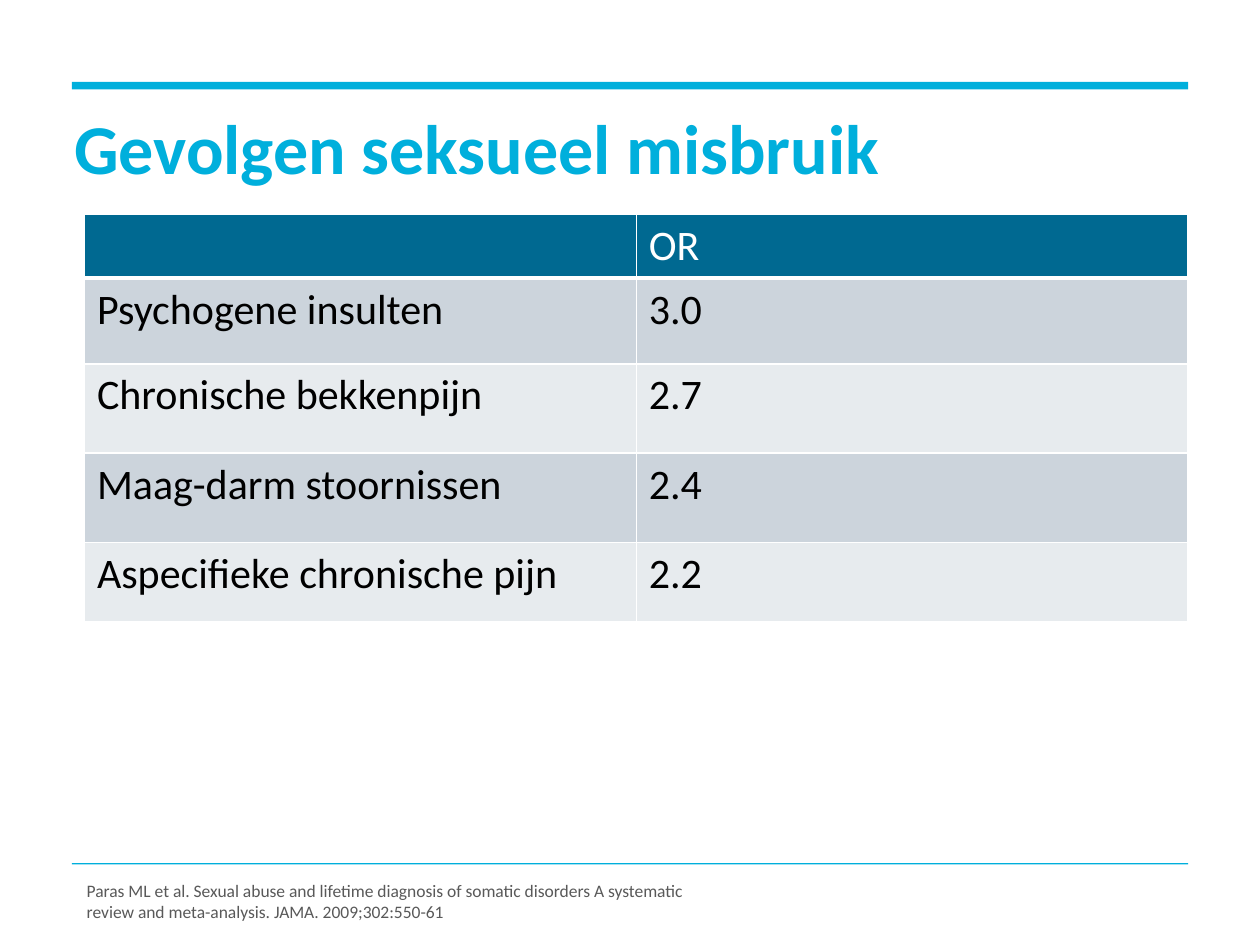
from lxml.etree import SubElement
from pptx import Presentation
from pptx.dml.color import RGBColor
from pptx.enum.shapes import MSO_SHAPE as Shape
from pptx.enum.text import MSO_ANCHOR as Anchor, MSO_AUTO_SIZE as AutoSize, PP_ALIGN as Align
from pptx.oxml.ns import qn
from pptx.util import Inches, Pt

CYAN = RGBColor(0x00, 0xAF, 0xDC)
HEADER_BLUE = RGBColor(0x00, 0x69, 0x91)
BAND_DARK = RGBColor(0xCC, 0xD4, 0xDC)
BAND_LIGHT = RGBColor(0xE7, 0xEB, 0xEE)
WHITE = RGBColor(0xFF, 0xFF, 0xFF)
BLACK = RGBColor(0x00, 0x00, 0x00)
GREY = RGBColor(0x59, 0x59, 0x59)

ODDS_RATIOS = [
    ("", "OR"),
    ("Psychogene insulten", "3.0"),
    ("Chronische bekkenpijn", "2.7"),
    ("Maag-darm stoornissen", "2.4"),
    ("Aspecifieke chronische pijn", "2.2"),
]
ROW_HEIGHTS = [0.5, 0.68, 0.71, 0.71, 0.63]
CITATION = ("Paras ML et al. Sexual abuse and lifetime diagnosis of somatic disorders "
            "A systematic review and meta-analysis. JAMA. 2009;302:550-61")


def set_attributes(target, values):
    for name, value in values.items():
        setattr(target, name, value)


def format_font(paragraph, size, color, bold=False):
    set_attributes(paragraph.font, {"name": "Calibri", "size": Pt(size), "bold": bold})
    paragraph.font.color.rgb = color


def add_rule(slide, left, top, width, height):
    rule = slide.shapes.add_shape(Shape.RECTANGLE, left, top, width, height)
    rule.shadow.inherit = False
    rule.fill.solid()
    rule.fill.fore_color.rgb = CYAN
    rule.line.fill.background()


def place_title(slide, left, top, width, height):
    title = slide.shapes.title
    set_attributes(title, {"left": left, "top": top, "width": width, "height": height})
    frame = title.text_frame
    set_attributes(frame, {
        "text": "Gevolgen seksueel misbruik", "word_wrap": True,
        "vertical_anchor": Anchor.TOP, "auto_size": AutoSize.NONE,
        "margin_left": 0, "margin_top": 0, "margin_right": 0, "margin_bottom": 0,
    })
    heading = frame.paragraphs[0]
    set_attributes(heading, {"alignment": Align.LEFT, "line_spacing": Pt(42)})
    format_font(heading, 40, CYAN, bold=True)


def add_cell_borders(cell, bottom_width):
    properties = cell._tc.get_or_add_tcPr()
    for side, width in {"lnL": 1, "lnR": 1, "lnT": 1, "lnB": bottom_width}.items():
        border = SubElement(properties, qn(f"a:{side}"), w=str(Pt(width)))
        fill = SubElement(border, qn("a:solidFill"))
        SubElement(fill, qn("a:srgbClr"), val=str(WHITE))


def add_odds_table(slide, left, top, width, height):
    table = slide.shapes.add_table(len(ODDS_RATIOS), 2, left, top, width, height).table
    for row_index, (values, row_height) in enumerate(zip(ODDS_RATIOS, ROW_HEIGHTS)):
        is_header = row_index == 0
        band = BAND_DARK if row_index % 2 else BAND_LIGHT
        table.rows[row_index].height = Inches(row_height)
        for column_index, value in enumerate(values):
            cell = table.cell(row_index, column_index)
            add_cell_borders(cell, 3 if is_header else 1)
            cell.fill.solid()
            cell.fill.fore_color.rgb = HEADER_BLUE if is_header else band
            if value:
                cell.text = value
                format_font(cell.text_frame.paragraphs[0], 24, WHITE if is_header else BLACK)


def add_citation(slide, left, top, width, height):
    frame = slide.shapes.add_textbox(left, top, width, height).text_frame
    set_attributes(frame, {
        "text": CITATION, "word_wrap": True,
        "vertical_anchor": Anchor.BOTTOM, "auto_size": AutoSize.SHAPE_TO_FIT_TEXT,
    })
    format_font(frame.paragraphs[0], 10, GREY)


def main():
    presentation = Presentation()
    presentation.slide_width, presentation.slide_height = Inches(10), Inches(7.5)
    slide = presentation.slides.add_slide(presentation.slide_layouts[5])
    add_rule(slide, Inches(0.57), Inches(0.65), Inches(8.86), Inches(0.06))
    add_rule(slide, Inches(0.57), Inches(6.85), Inches(8.86), Inches(0.01))
    place_title(slide, Inches(0.59), Inches(0.91), Inches(8.84), Inches(0.72))
    add_odds_table(slide, Inches(0.67), Inches(1.7), Inches(8.76), Inches(sum(ROW_HEIGHTS)))
    add_citation(slide, Inches(0.59), Inches(6.93), Inches(4.96), Inches(0.44))
    presentation.save("out.pptx")


if __name__ == "__main__":
    main()
